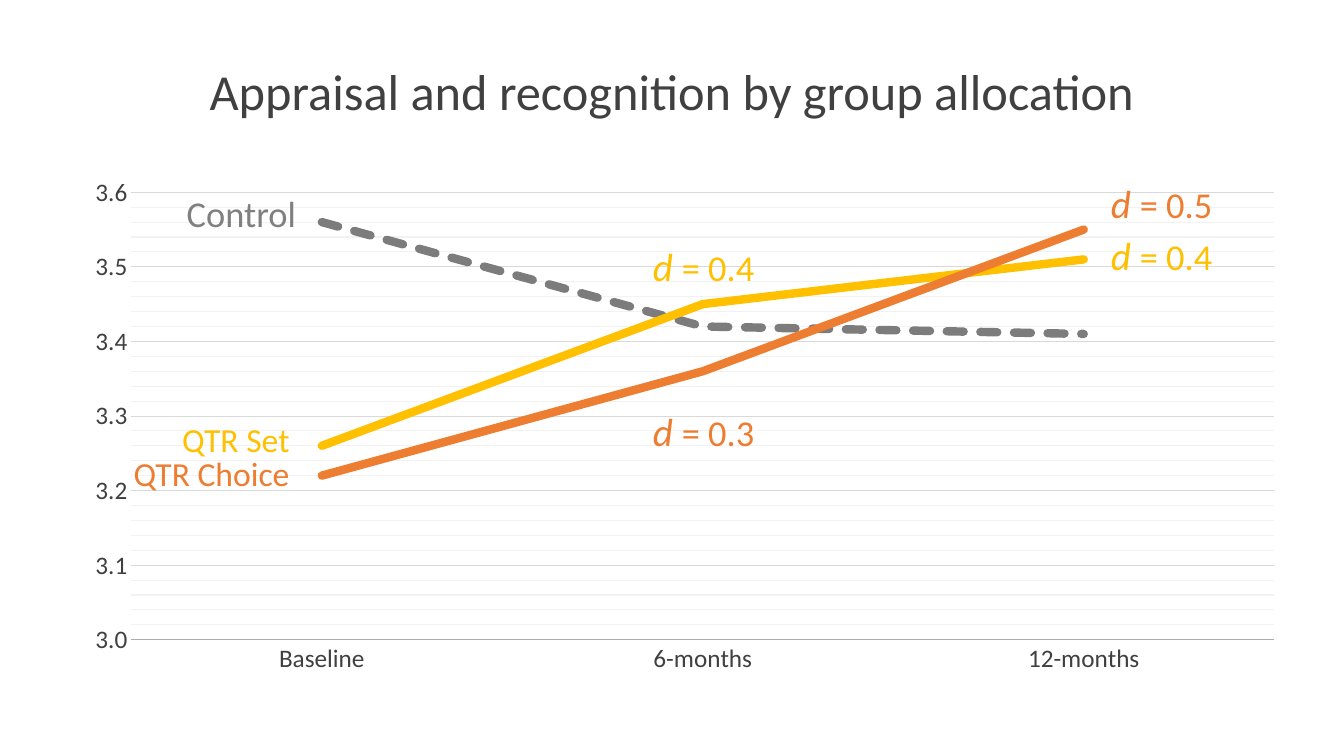
"""Build the slide on appraisal and recognition by group allocation."""
from dataclasses import dataclass

from lxml.etree import SubElement
from pptx import Presentation
from pptx.chart.chart import Chart
from pptx.chart.data import CategoryChartData
from pptx.dml.color import RGBColor as Rgb
from pptx.enum.chart import XL_CHART_TYPE as ChartType, XL_TICK_MARK as Tick
from pptx.enum.dml import MSO_LINE_DASH_STYLE as Dash
from pptx.enum.text import MSO_ANCHOR as Anchor, MSO_AUTO_SIZE as AutoSize, PP_ALIGN as Align
from pptx.oxml.ns import qn
from pptx.slide import Slide
from pptx.text.text import Font, TextFrame
from pptx.util import Emu, Pt

SLIDE_WIDTH, SLIDE_HEIGHT = 1344, 756
EMU_PER_PX = 12192000 / SLIDE_WIDTH


@dataclass(frozen=True)
class Theme:
    font: str = "Calibri"
    ink: str = "404040"
    control_line: str = "7C7C7C"
    control_text: str = "808080"
    qtr_set: str = "FFC000"
    qtr_choice: str = "ED7D31"
    axis: str = "AFABAB"
    major_grid: str = "D9D9D9"
    minor_grid: str = "F2F2F2"
    title_size: int = 36
    symbol_size: int = 28
    label_size: int = 26
    group_size: int = 24
    axis_size: int = 18
    line_spacing: float = 0.85


@dataclass(frozen=True)
class Box:
    left: int
    top: int
    width: int
    height: int

    def emu(self) -> tuple[Emu, ...]:
        return tuple(px(n) for n in (self.left, self.top, self.width, self.height))


@dataclass(frozen=True)
class Group:
    name: str
    scores: tuple[float, ...]
    color: str
    dash: Dash | None = None


@dataclass(frozen=True)
class GroupLabel:
    box: Box
    lines: tuple[tuple[str, str], ...]
    size: int


@dataclass(frozen=True)
class Effect:
    box: Box
    size: str
    color: str


THEME = Theme()
TITLE = "Appraisal and recognition by group allocation"
TITLE_BOX = Box(62, 64, 1220, 62)
CHART_BOX = Box(40, 177, 1235, 526)
PLOT_LAYOUT = {"x": 0.074, "y": 0.029, "w": 0.926, "h": 0.851}
OCCASIONS = ("Baseline", "6-months", "12-months")
GROUPS = (
    Group("Control", (3.56, 3.42, 3.41), THEME.control_line, Dash.SQUARE_DOT),
    Group("QTR Set", (3.26, 3.45, 3.51), THEME.qtr_set),
    Group("QTR Choice", (3.22, 3.36, 3.55), THEME.qtr_choice),
)
GROUP_LABELS = (
    GroupLabel(Box(101, 420, 206, 80),
               (("QTR Set ", THEME.qtr_set), ("QTR Choice ", THEME.qtr_choice)),
               THEME.group_size),
    GroupLabel(Box(103, 193, 203, 48), (("Control", THEME.control_text),), THEME.label_size),
)
EFFECTS = (
    Effect(Box(643, 237, 187, 57), "0.4", THEME.qtr_set),
    Effect(Box(643, 402, 200, 57), "0.3", THEME.qtr_choice),
    Effect(Box(1101, 174, 175, 57), "0.5", THEME.qtr_choice),
    Effect(Box(1101, 226, 202, 57), "0.4", THEME.qtr_set),
)


def px(length: int) -> Emu:
    return Emu(round(length * EMU_PER_PX))


def style_font(font: Font, size: int, color: str, italic: bool = False) -> None:
    font.name = THEME.font
    font.size = Pt(size)
    font.italic = italic
    font.color.rgb = Rgb.from_string(color)


def add_title(slide: Slide) -> None:
    title = slide.shapes.title
    title.left, title.top, title.width, title.height = TITLE_BOX.emu()
    frame = title.text_frame
    frame.text = TITLE
    frame.word_wrap = True
    frame.auto_size = AutoSize.NONE
    frame.vertical_anchor = Anchor.TOP
    heading = frame.paragraphs[0]
    heading.alignment = Align.CENTER
    heading.line_spacing = THEME.line_spacing
    style_font(heading.runs[0].font, THEME.title_size, THEME.ink)


def add_frame(slide: Slide, box: Box) -> TextFrame:
    frame = slide.shapes.add_textbox(*box.emu()).text_frame
    frame.word_wrap = True
    frame.auto_size = AutoSize.SHAPE_TO_FIT_TEXT
    return frame


def add_group_label(slide: Slide, label: GroupLabel) -> None:
    frame = add_frame(slide, label.box)
    frame.text = "\n".join(name for name, _ in label.lines)
    for paragraph, (_, color) in zip(frame.paragraphs, label.lines):
        paragraph.alignment = Align.RIGHT
        paragraph.line_spacing = THEME.line_spacing
        style_font(paragraph.runs[0].font, label.size, color)


def add_effect(slide: Slide, effect: Effect) -> None:
    paragraph = add_frame(slide, effect.box).paragraphs[0]
    paragraph.text = "d "
    style_font(paragraph.runs[0].font, THEME.symbol_size, effect.color, italic=True)
    value = paragraph.add_run()
    value.text = f"= {effect.size}"
    style_font(value.font, THEME.label_size, effect.color)


def format_axes(chart: Chart) -> None:
    occasions, scores = chart.category_axis, chart.value_axis
    for axis in (occasions, scores):
        axis.major_tick_mark = axis.minor_tick_mark = Tick.NONE
        style_font(axis.tick_labels.font, THEME.axis_size, THEME.ink)
    occasions.format.line.color.rgb = Rgb.from_string(THEME.axis)
    occasions.format.line.width = Pt(1)
    scores.format.line.fill.background()
    scores.minimum_scale, scores.maximum_scale = 3.0, 3.6
    scores.major_unit, scores.minor_unit = 0.1, 0.02
    scores.tick_labels.number_format = "0.0"
    scores.tick_labels.number_format_is_linked = False
    scores.has_major_gridlines = scores.has_minor_gridlines = True
    for tag, color in (("c:majorGridlines", THEME.major_grid),
                       ("c:minorGridlines", THEME.minor_grid)):
        node = chart.element.find(".//" + qn(tag))
        for child in ("c:spPr", "a:ln", "a:solidFill", "a:srgbClr"):
            node = SubElement(node, qn(child))
            if child == "a:ln":
                node.set("w", str(Pt(0.75)))
        node.set("val", color)


def fix_plot_area(chart: Chart) -> None:
    plot_area = chart.element.find(".//" + qn("c:plotArea"))
    for automatic in plot_area.findall(qn("c:layout")):
        plot_area.remove(automatic)
    layout = SubElement(plot_area, qn("c:layout"))
    plot_area.insert(0, layout)
    manual = SubElement(layout, qn("c:manualLayout"))
    settings = {"layoutTarget": "inner", "xMode": "edge", "yMode": "edge", **PLOT_LAYOUT}
    for tag, value in settings.items():
        SubElement(manual, qn(f"c:{tag}")).set("val", str(value))
    for series in plot_area.iter(qn("c:ser")):
        for line in series.iter(qn("a:ln")):
            line.set("cap", "rnd")


def add_score_chart(slide: Slide) -> None:
    data = CategoryChartData(number_format="0.0")
    data.categories = OCCASIONS
    for group in GROUPS:
        data.add_series(group.name, group.scores)
    chart = slide.shapes.add_chart(ChartType.LINE, *CHART_BOX.emu(), data).chart
    chart.has_legend = chart.has_title = False
    style_font(chart.font, THEME.axis_size, THEME.ink)
    chart.plots[0].vary_by_categories = False
    for series, group in zip(chart.plots[0].series, GROUPS):
        series.smooth = False
        line = series.format.line
        line.color.rgb = Rgb.from_string(group.color)
        line.width = Pt(6)
        if group.dash:
            line.dash_style = group.dash
    format_axes(chart)
    fix_plot_area(chart)


def main() -> None:
    deck = Presentation()
    deck.slide_width, deck.slide_height = px(SLIDE_WIDTH), px(SLIDE_HEIGHT)
    slide = deck.slides.add_slide(deck.slide_layouts[5])
    add_title(slide)
    add_score_chart(slide)
    for label in GROUP_LABELS:
        add_group_label(slide, label)
    for effect in EFFECTS:
        add_effect(slide, effect)
    deck.save("out.pptx")


if __name__ == "__main__":
    main()
